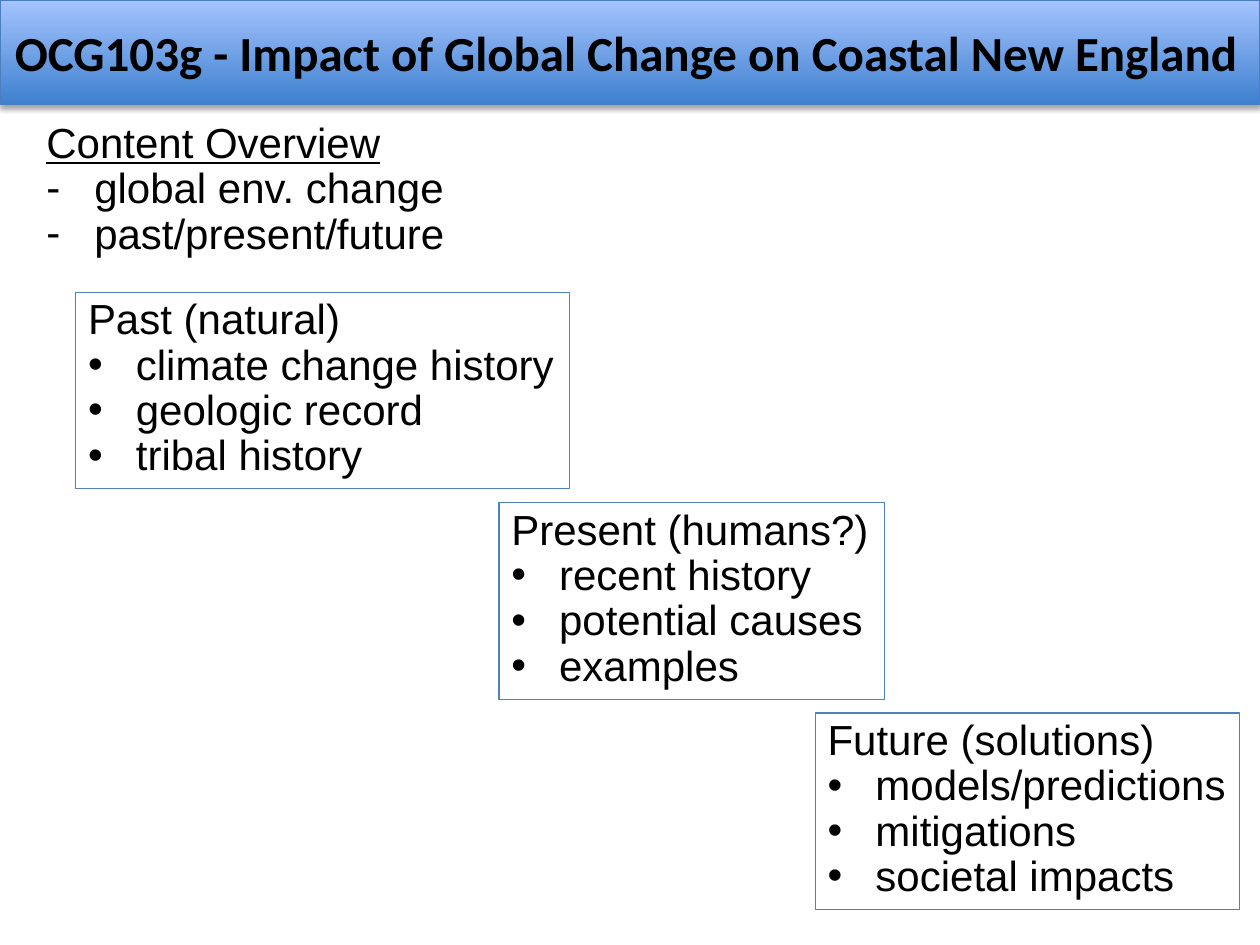
from lxml import etree
from pptx import Presentation
from pptx.dml.color import RGBColor
from pptx.enum import shapes, text
from pptx.oxml import ns
from pptx.util import Inches, Pt

INDENT = Inches(0.38)
CARD_HEIGHT = 1.56
CARD_TOP, CARD_STEP = 2.32, 1.67

# left, width, heading, bullet points
CARDS = [
    (0.6, 3.92, "Past (natural)",
     ["climate change history", "geologic record", "tribal history"]),
    (3.96, 3.06, "Present (humans?)",
     ["recent history", "potential causes", "examples"]),
    (6.47, 3.37, "Future (solutions)",
     ["models/predictions", "mitigations", "societal impacts"]),
]


def color(value):
    return RGBColor.from_string(value)


def add_child(parent, tag, **attrs):
    child = etree.SubElement(parent, ns.qn(tag))
    for name, value in attrs.items():
        child.set(name, str(value))
    return child


def add_bullet(p, char):
    """Give a paragraph a hanging bullet."""
    pPr = p._p.get_or_add_pPr()
    pPr.set("marL", str(INDENT))
    pPr.set("indent", str(-INDENT))
    add_child(pPr, "a:buFont", typeface="Arial")
    add_child(pPr, "a:buChar", char=char)


def write(p, content, font="Arial", size=24, bold=False, underline=False,
          spacing=0.9, bullet=None):
    """Fill one paragraph with formatted text."""
    p.line_spacing = spacing
    if bullet:
        add_bullet(p, bullet)
    r = p.add_run()
    r.text = content
    r.font.name = font
    r.font.size = Pt(size)
    r.font.bold = bold
    r.font.underline = underline
    r.font.color.rgb = color("000000")


def add_box(slide, left, top, width, height):
    """Add a text box that does not wrap and grows with its text."""
    sp = slide.shapes.add_textbox(
        Inches(left), Inches(top), Inches(width), Inches(height))
    sp.text_frame.word_wrap = False
    sp.text_frame.auto_size = text.MSO_AUTO_SIZE.SHAPE_TO_FIT_TEXT
    return sp


def add_list(slide, box, heading, items, bullet, underline=False, line=None):
    """Add a heading with bullet points, framed if a line colour is given."""
    sp = add_box(slide, *box)
    if line:
        sp.line.color.rgb = color(line)
        sp.line.width = Pt(0.75)
    tf = sp.text_frame
    write(tf.paragraphs[0], heading, underline=underline)
    for item in items:
        write(tf.add_paragraph(), item, bullet=bullet)


def add_banner(slide, width, height):
    """Add the gradient bar with its soft shadow below."""
    sp = slide.shapes.add_shape(
        shapes.MSO_SHAPE.RECTANGLE, 0, 0, Inches(width), Inches(height))
    sp.fill.gradient()
    sp.fill.gradient_angle = 90
    for stop, value in zip(sp.fill.gradient_stops, ("3F80CE", "A4C4FF")):
        stop.color.rgb = color(value)
    sp.line.color.rgb = color("4B7EBC")
    sp.line.width = Pt(0.75)

    sp.shadow.inherit = False
    effects = sp._element.spPr.find(ns.qn("a:effectLst"))
    shadow = add_child(effects, "a:outerShdw", blurRad=Pt(3.1), dist=Pt(1.8),
                       dir=90 * 60000, rotWithShape=0)
    add_child(add_child(shadow, "a:srgbClr", val="000000"),
              "a:alpha", val=35000)


def main():
    prs = Presentation()
    prs.slide_width, prs.slide_height = Inches(10), Inches(7.5)
    slide = prs.slides.add_slide(prs.slide_layouts[6])

    # Title bar
    add_banner(slide, 10, 0.83)
    title = add_box(slide, 0.02, 0.13, 10.03, 0.57)
    write(title.text_frame.paragraphs[0],
          "OCG103g - Impact of Global Change on Coastal New England",
          font="Calibri", size=28, bold=True, spacing=1.0)

    # Overview
    add_list(slide, (0.27, 0.92, 3.36, 1.2), "Content Overview",
             ["global env. change", "past/present/future"],
             bullet="-", underline=True)

    # Past, present and future, stepping down
    for i, (left, width, heading, items) in enumerate(CARDS):
        box = (left, CARD_TOP + i * CARD_STEP, width, CARD_HEIGHT)
        add_list(slide, box, heading, items, bullet="•", line="4F81BD")

    prs.save("out.pptx")


if __name__ == "__main__":
    main()
